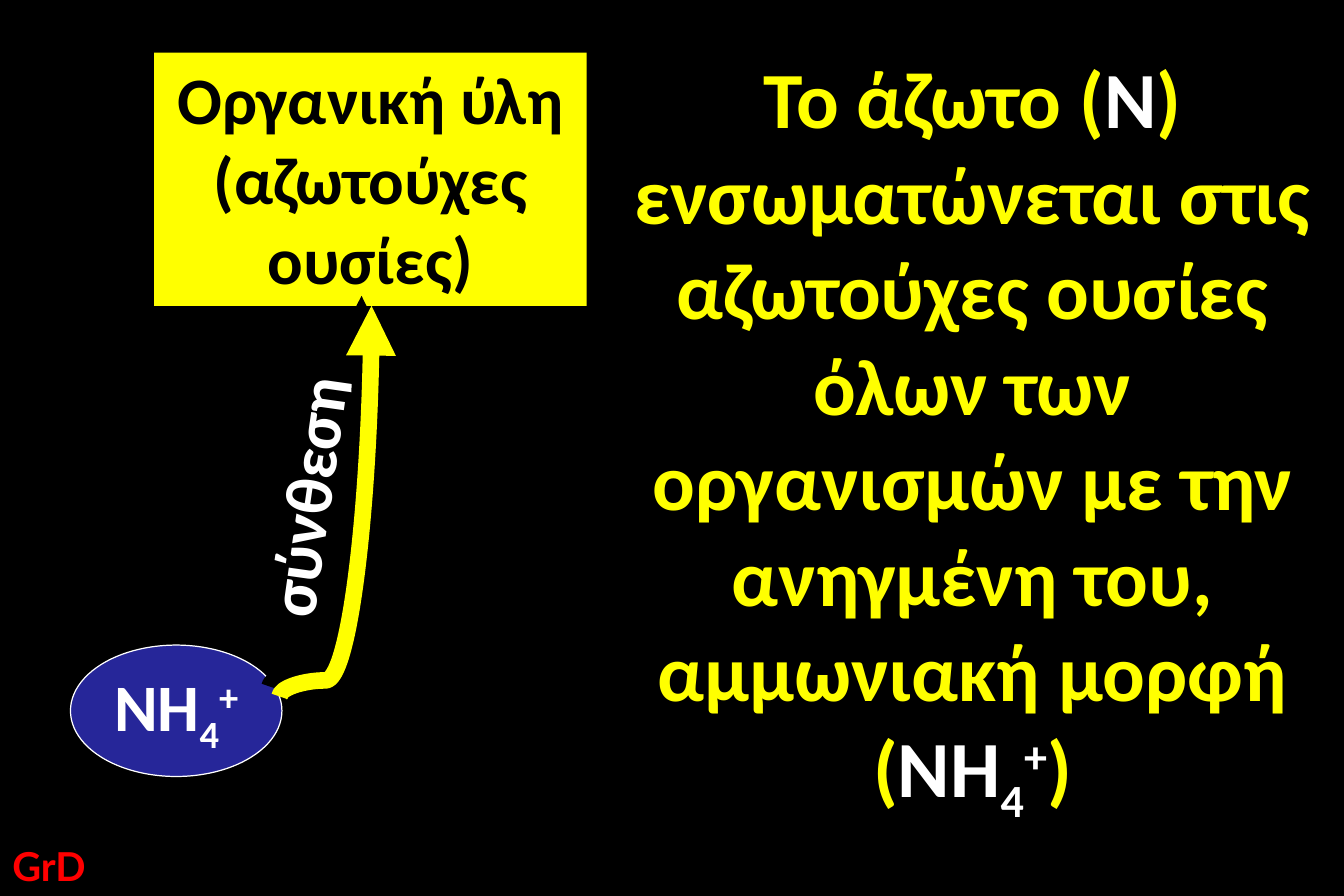
from dataclasses import dataclass
from typing import Any

import pptx
import pptx.dml.color
import pptx.enum.shapes
import pptx.enum.text
import pptx.oxml
import pptx.oxml.ns
import pptx.util

Inches = pptx.util.Inches
Pt = pptx.util.Pt
SHAPES = pptx.enum.shapes.MSO_SHAPE
YELLOW, WHITE, BLACK, RED, NAVY = "FFFF00", "FFFFFF", "000000", "FF0000", "262699"


@dataclass
class Run:
    text: str
    color: str | None = None
    base: int = 0  # baseline shift in percent


@dataclass
class Box:
    at: tuple[float, float, float, float]
    lines: list[list[Run]]
    look: dict[str, Any]
    kind: Any = None  # None gives a plain text box
    fill: str = ""
    edge: str = ""
    turn: float = 0


def rgb(code: str) -> pptx.dml.color.RGBColor:
    return pptx.dml.color.RGBColor.from_string(code)


def write(frame: Any, lines: list[list[Run]], *, size: float, color: str,
          font: str = "Calibri", align: str = "CENTER", anchor: str = "TOP",
          wrap: bool = True) -> None:
    frame.word_wrap = wrap
    frame.vertical_anchor = pptx.enum.text.MSO_ANCHOR[anchor]
    for i, line in enumerate(lines):
        para = frame.add_paragraph() if i else frame.paragraphs[0]
        para.alignment = pptx.enum.text.PP_ALIGN[align]
        for part in line:
            run = para.add_run()
            run.text = part.text
            run.font.name = font
            run.font.size = Pt(size)
            run.font.bold = True
            run.font.color.rgb = rgb(part.color or color)
            if part.base:
                run.font._element.set("baseline", str(part.base * 1000))


def draw(slide: Any, box: Box) -> None:
    spot = [Inches(v) for v in box.at]
    if box.kind is None:
        shape = slide.shapes.add_textbox(*spot)
    else:
        shape = slide.shapes.add_shape(box.kind, *spot)
        shape.shadow.inherit = False
        shape.fill.solid()
        shape.fill.fore_color.rgb = rgb(box.fill)
        if box.edge:
            shape.line.color.rgb = rgb(box.edge)
            shape.line.width = Pt(0.75)
        else:
            shape.line.fill.background()
    shape.rotation = box.turn
    write(shape.text_frame, box.lines, **box.look)


def xml(text: str) -> Any:
    tag, rest = text.split(" ", 1)
    return pptx.oxml.parse_xml(f"{tag} {pptx.oxml.ns.nsdecls('a')} {rest}")


def arrow(slide: Any) -> None:
    """Draw the curved arrow from the ion up to the organic matter."""
    kind = pptx.enum.shapes.MSO_CONNECTOR.CURVE
    left, top, width, height = 1.09, 3.81, 3.27, 0.77
    link = slide.shapes.add_connector(
        kind, Inches(left), Inches(top), Inches(left + width), Inches(top + height))
    link.line.color.rgb = rgb(YELLOW)
    link.line.width = Pt(10)
    props = link._element.spPr
    props.find(pptx.oxml.ns.qn("a:xfrm")).set("rot", str(90 * 60000))
    guides = props.find(pptx.oxml.ns.qn("a:prstGeom")).get_or_add_avLst()
    guides.append(xml('<a:gd name="adj1" fmla="val 95900"/>'))
    link.line._get_or_add_ln().append(xml('<a:headEnd type="triangle"/>'))
    props.append(xml(
        f'<a:effectLst ><a:outerShdw blurRad="0" dist="{Pt(8.5)}" dir="{225 * 60000}" '
        f'algn="ctr" rotWithShape="0"><a:srgbClr val="{BLACK}"/></a:outerShdw></a:effectLst>'))


ION = [Run("ΝΗ", WHITE), Run("4", WHITE, -25), Run("+", WHITE, 30)]
BOXES = [
    Box((1.44, 3.76, 2.24, 0.77), [[Run("σύνθεση")]],
        dict(size=40, color=WHITE, align="LEFT", wrap=False), turn=278.1),
    Box((0.59, 5.4, 1.77, 1.1), [ION],
        dict(size=40, color=WHITE, anchor="MIDDLE", wrap=False),
        SHAPES.OVAL, NAVY, WHITE),
    Box((5.07, 0.36, 6.14, 6.56),
        [[Run("Το άζωτο ("), Run("Ν", WHITE),
          Run(") ενσωματώνεται στις αζωτούχες ουσίες όλων των οργανισμών "
              "με την ανηγμένη του, αμμωνιακή μορφή")],
         [Run("("), *ION, Run(")")]],
        dict(size=48, color=YELLOW)),
    Box((1.29, 0.44, 3.62, 2.12),
        [[Run("Οργανική ύλη")], [Run("(αζωτούχες ουσίες)")]],
        dict(size=40, color=BLACK), SHAPES.RECTANGLE, YELLOW),
    Box((0, 7, 0.82, 0.5), [[Run("GrD")]], dict(size=24, color=RED, font="Lato")),
]


def main() -> None:
    deck = pptx.Presentation()
    deck.slide_width, deck.slide_height = Inches(11.25), Inches(7.5)
    slide = deck.slides.add_slide(deck.slide_layouts[6])
    slide.background.fill.solid()
    slide.background.fill.fore_color.rgb = rgb(BLACK)
    for box in BOXES:
        draw(slide, box)
    arrow(slide)
    deck.save("out.pptx")


if __name__ == "__main__":
    main()
